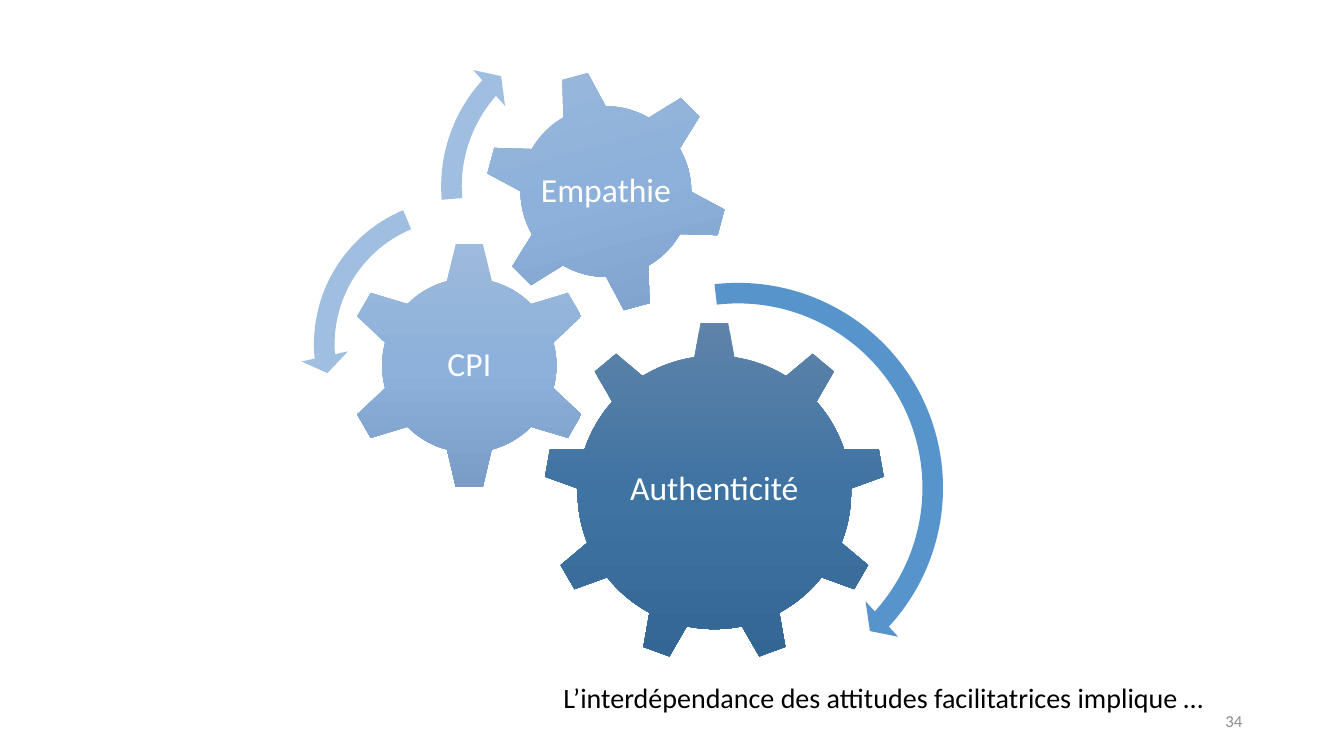
from copy import deepcopy
from pptx import Presentation
from pptx.dml.color import RGBColor
from pptx.enum import shapes, text
from pptx.oxml.ns import qn
from pptx.util import Inches, Pt

MSO, ALIGN, ANCHOR = shapes.MSO_SHAPE, text.PP_ALIGN, text.MSO_ANCHOR

THEME = {
    "font": "Calibri", "label_size": 24, "caption_size": 20, "number_size": 12,
    "white": "FFFFFF", "black": "000000", "grey": "8C8C8C",
    "dark_gear": ("5F83AA", "3F73A2", "346694"),
    "light_gear": ("9EBADC", "8DB1DA", "799DC6"),
    "dark_arrow": "5794CB", "light_arrow": "A0BEE0",
}

# Content: label, shape, (left, top, side), rotation, gradient, label (width, height)
GEARS = [
    ("Authenticité", MSO.GEAR_9, (5.39, 3.19, 3.39), 0, "dark_gear", (2.03, 1.74)),
    ("CPI", MSO.GEAR_6, (3.42, 2.39, 2.47), 0, "light_gear", (1.22, 1.22)),
    ("Empathie", MSO.GEAR_6, (4.8, 0.69, 2.42), 345, "light_gear", (1.36, 1.36)),
]
# Shape, (left, top, side), adjustments, colour
ARROWS = [
    (MSO.CIRCULAR_ARROW, (5.15, 2.67, 4.34),
     (0.047, 2.99, 25.425, 158.057, 0.055), "dark_arrow"),
    (MSO.LEFT_CIRCULAR_ARROW, (2.98, 1.84, 3.15),
     (0.065, 4.3, 104.891, 148.378, 0.075), "light_arrow"),
    (MSO.CIRCULAR_ARROW, (4.24, 0.15, 3.4),
     (0.06, 3.941, 133.138, 105.082, 0.07), "light_arrow"),
]
CAPTION = "L’interdépendance des attitudes facilitatrices implique …"
NUMBER = "34"


def rgb(name):
    return RGBColor.from_string(THEME[name])


def add_square(s, kind, box):
    left, top, side = (Inches(v) for v in box)
    sp = s.shapes.add_shape(kind, left, top, side, side)
    sp.shadow.inherit = False
    sp.line.fill.background()
    return sp


def fill_gradient(sp, colours):
    sp.fill.gradient()
    sp.fill.gradient_angle = 270
    stops = sp._element.spPr.find(qn("a:gradFill")).find(qn("a:gsLst"))
    stops.append(deepcopy(stops[0]))
    for i, (stop, colour) in enumerate(zip(sp.fill.gradient_stops, colours)):
        stop.position = i / 2
        stop.color.rgb = RGBColor.from_string(colour)


def add_text(s, words, box, size, colour, align=ALIGN.LEFT, anchor=ANCHOR.MIDDLE,
             wrap=True, inset=None, spacing=None):
    tf = s.shapes.add_textbox(*(Inches(v) for v in box)).text_frame
    tf.word_wrap, tf.vertical_anchor = wrap, anchor
    if inset is not None:
        tf.margin_left = tf.margin_right = Inches(inset)
        tf.margin_top = tf.margin_bottom = Inches(inset)
    p = tf.paragraphs[0]
    p.text, p.alignment, p.line_spacing = words, align, spacing
    p.font.name, p.font.size = THEME["font"], Pt(THEME[size])
    p.font.color.rgb = rgb(colour)
    return tf


prs = Presentation()
prs.slide_width, prs.slide_height = Inches(13.33), Inches(7.5)
s = prs.slides.add_slide(prs.slide_layouts[6])

# Gears, each with a level label at its centre
for label, kind, box, rotation, gradient, (width, height) in GEARS:
    gear = add_square(s, kind, box)
    gear.rotation = rotation
    fill_gradient(gear, THEME[gradient])
    left, top, side = box
    label_box = (left + (side - width) / 2, top + (side - height) / 2, width, height)
    if kind == MSO.GEAR_9:
        label_box = (label_box[0], 3.99, width, height)
    add_text(s, label, label_box, "label_size", "white", ALIGN.CENTER,
             inset=0.03, spacing=0.9)

# Arrows showing which way the gears turn
for kind, box, adjustments, colour in ARROWS:
    arrow = add_square(s, kind, box)
    for i, value in enumerate(adjustments):
        arrow.adjustments[i] = value
    arrow.fill.solid()
    arrow.fill.fore_color.rgb = rgb(colour)

# Caption and slide number
caption = add_text(s, CAPTION, (5.49, 6.74, 6.74, 0.4), "caption_size", "black",
                   anchor=ANCHOR.TOP, wrap=False, spacing=0.9)
caption.auto_size = text.MSO_AUTO_SIZE.SHAPE_TO_FIT_TEXT
add_text(s, NUMBER, (9.42, 6.95, 3, 0.4), "number_size", "grey", ALIGN.RIGHT)

prs.save("out.pptx")
